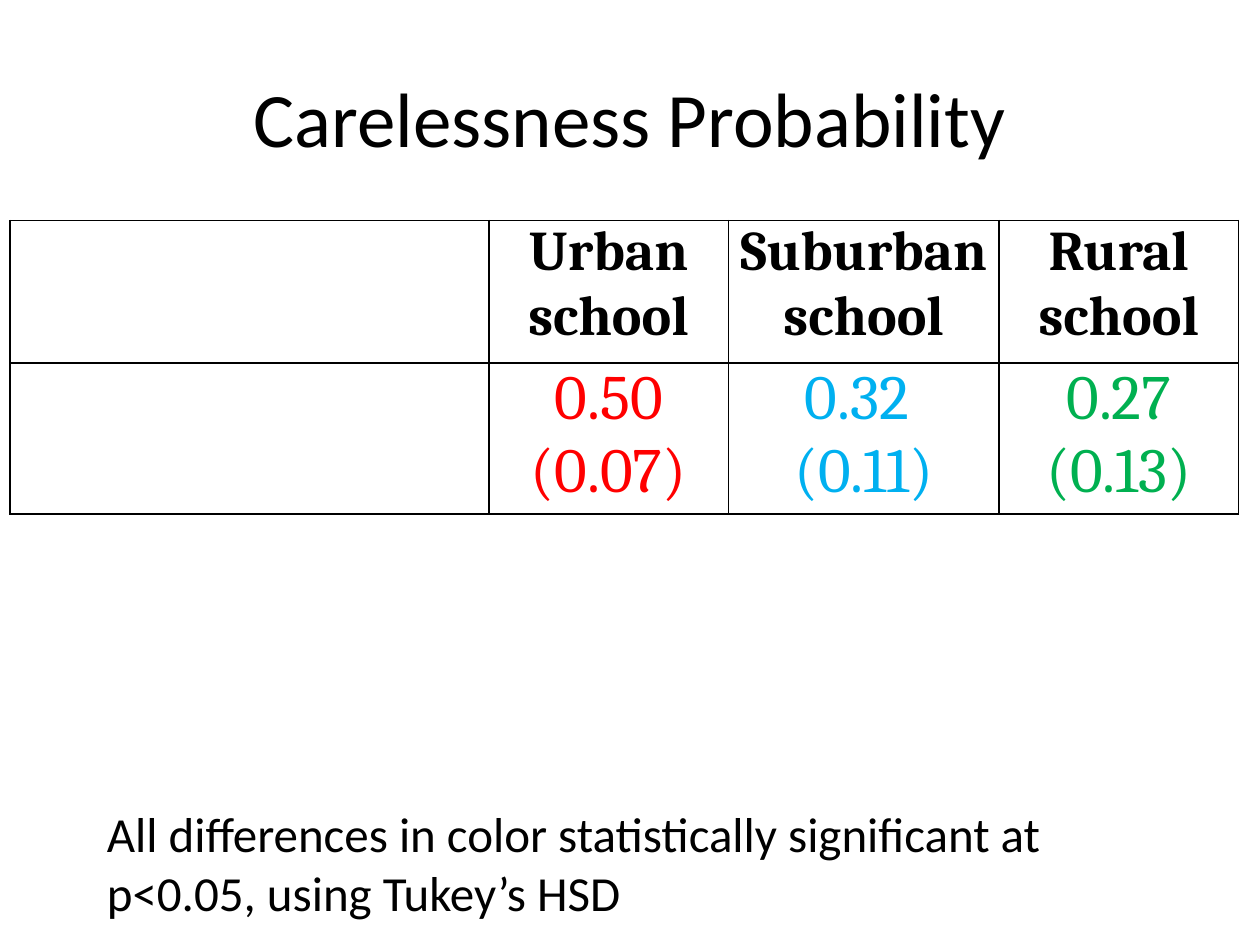
from pptx import Presentation
from pptx.dml.color import RGBColor
from pptx.enum.text import MSO_ANCHOR as Anchor, MSO_AUTO_SIZE as Fit, PP_ALIGN as Align
from pptx.oxml import parse_xml
from pptx.oxml.ns import nsdecls
from pptx.util import Inches, Pt

BLACK = RGBColor(0x00, 0x00, 0x00)
RED = RGBColor(0xFF, 0x00, 0x00)
BLUE = RGBColor(0x00, 0xB0, 0xF0)
GREEN = RGBColor(0x00, 0xB0, 0x50)


def write(frame, text, look, color=BLACK, align=Align.LEFT):
    para = frame.paragraphs[0]
    para.text = text
    para.alignment = align
    for run in para.runs:
        run.font.color.rgb = color
        for name, value in look.items():
            setattr(run.font, name, value)


def rule(cell):
    props = cell._tc.get_or_add_tcPr()
    for pos, side in enumerate(("lnL", "lnR", "lnT", "lnB")):
        props.insert(pos, parse_xml(
            f'<a:{side} {nsdecls("a")} w="12700"><a:solidFill>'
            f'<a:srgbClr val="{BLACK}"/></a:solidFill></a:{side}>'))


prs = Presentation()
prs.slide_width, prs.slide_height = Inches(10), Inches(7.5)
slide = prs.slides.add_slide(prs.slide_layouts[6])
shapes = slide.shapes

# Title
title = shapes.add_textbox(Inches(0.5), Inches(0.3), Inches(9), Inches(1.25)).text_frame
title.word_wrap = True
title.vertical_anchor = Anchor.MIDDLE
write(title, "Carelessness Probability", {"name": "Calibri", "size": Pt(44)}, align=Align.CENTER)

# Table of schools: mean and deviation
head = {"name": "Cambria", "size": Pt(32), "bold": True}
body = {"name": "Cambria", "size": Pt(36), "bold": False}
rows = [
    (1.13, head, [("Urban school", BLACK), ("Suburban school", BLACK), ("Rural school", BLACK)]),
    (1.01, body, [("0.50 (0.07)", RED), ("0.32 \v(0.11)", BLUE), ("0.27 (0.13)", GREEN)]),
]
widths = [3.8, 1.9, 2.15, 1.9]
table = shapes.add_table(len(rows), len(widths), Inches(0.08), Inches(1.75),
                         Inches(9.75), Inches(2.14)).table
table.first_row = table.horz_banding = False
for col, width in zip(table.columns, widths):
    col.width = Inches(width)

inset = {"margin_left": Inches(0.07), "margin_right": Inches(0.07),
         "margin_top": 0, "margin_bottom": 0}
for r, (height, look, items) in enumerate(rows):
    table.rows[r].height = Inches(height)
    for c, (text, color) in enumerate(items, 1):
        cell = table.cell(r, c)
        for name, value in inset.items():
            setattr(cell, name, value)
        write(cell.text_frame, text, look, color, Align.CENTER)
for cell in table.iter_cells():
    cell.fill.background()
    rule(cell)

# Note on significance
note = shapes.add_textbox(Inches(0.75), Inches(6.33), Inches(8.58), Inches(1.04)).text_frame
note.word_wrap = True
note.auto_size = Fit.SHAPE_TO_FIT_TEXT
write(note, "All differences in color statistically significant at p<0.05, using Tukey’s HSD",
      {"name": "Calibri", "size": Pt(28)})

prs.save("out.pptx")
